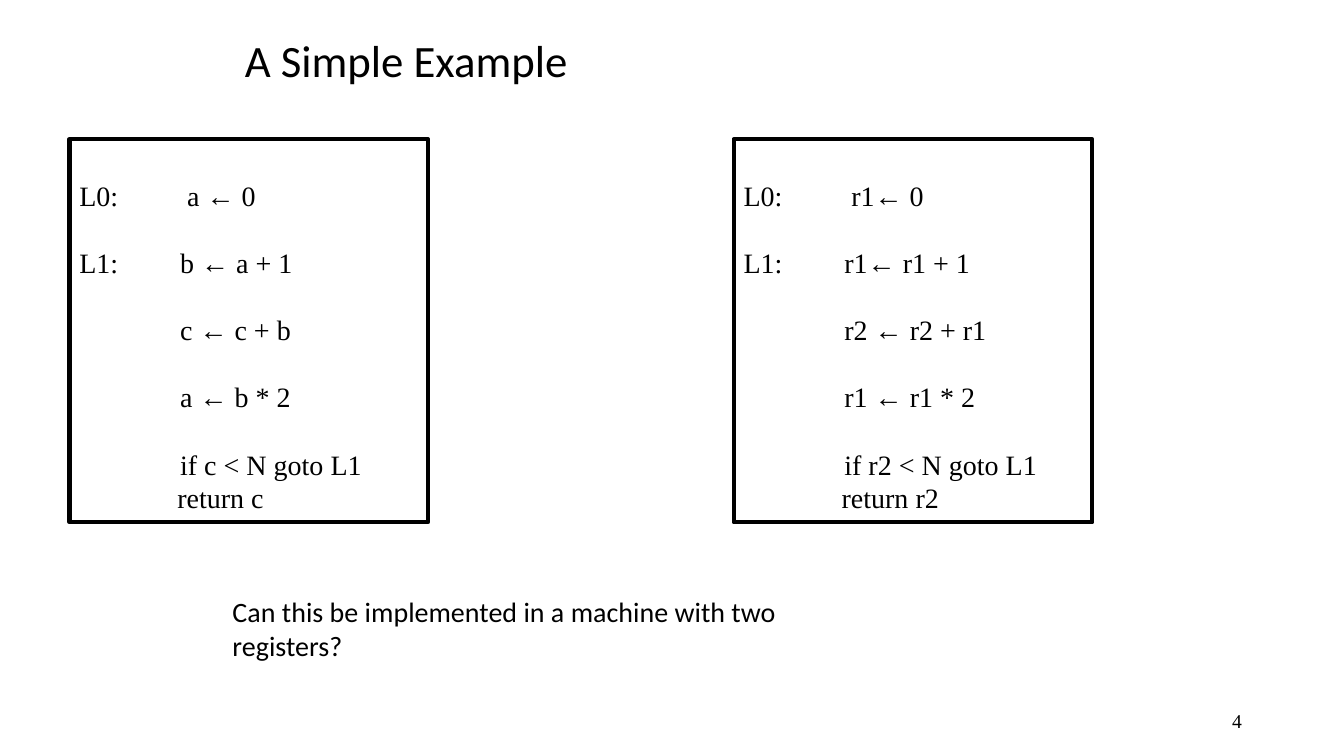
from pptx import Presentation
from pptx.dml.color import RGBColor
from pptx.enum.shapes import MSO_SHAPE
from pptx.enum.text import MSO_ANCHOR, PP_ALIGN
from pptx.util import Cm, Pt

RECTANGLE = MSO_SHAPE.RECTANGLE
TOP, MIDDLE, BOTTOM = MSO_ANCHOR.TOP, MSO_ANCHOR.MIDDLE, MSO_ANCHOR.BOTTOM
LEFT, RIGHT = PP_ALIGN.LEFT, PP_ALIGN.RIGHT

BLACK = "000000"
SANS, SERIF = "Calibri", "Times New Roman"
LINE_PITCH = Pt(24)
LABEL_WIDTH = Cm(2.54)
RETURN_INDENT = Cm(2.47)

VARIABLE_CODE = [
    ("L0:", " a ← 0"),
    ("L1:", "b ← a + 1"),
    ("", "c ← c + b"),
    ("", "a ← b * 2"),
    ("", "if c < N goto L1"),
    ("", "return c"),
]
REGISTER_CODE = [
    ("L0:", " r1← 0"),
    ("L1:", "r1← r1 + 1"),
    ("", "r2 ← r2 + r1"),
    ("", "r1 ← r1 * 2"),
    ("", "if r2 < N goto L1"),
    ("", "return r2"),
]


def color(hex_text):
    return RGBColor.from_string(hex_text)


def apply_format(target, values):
    for name, value in values.items():
        setattr(target, name, value)


def write(para, text, font, size):
    span = para.add_run()
    span.text = text
    apply_format(span.font, {"name": font, "size": Pt(size)})
    span.font.color.rgb = color(BLACK)


def add_text(page, box, text, font, size, anchor=TOP, para_format=None):
    frame = page.shapes.add_textbox(*box).text_frame
    apply_format(frame, {"word_wrap": True, "vertical_anchor": anchor})
    para = frame.paragraphs[0]
    apply_format(para, para_format or {})
    write(para, text, font, size)


def add_code(page, box, code):
    panel = page.shapes.add_shape(RECTANGLE, *box)
    panel.shadow.inherit = False
    panel.fill.background()
    panel.line.color.rgb = color(BLACK)
    panel.line.width = Pt(3)
    frame = panel.text_frame
    apply_format(frame, {"word_wrap": True, "vertical_anchor": BOTTOM,
                         "margin_bottom": Cm(0.2)})
    for index, (label, statement) in enumerate(code):
        para = frame.add_paragraph() if index else frame.paragraphs[0]
        is_return = statement.startswith("return")
        apply_format(para, {
            "alignment": LEFT,
            "line_spacing": LINE_PITCH,
            "space_before": Pt(0) if is_return else LINE_PITCH,
        })
        properties = para._p.get_or_add_pPr()
        margin = RETURN_INDENT if is_return else LABEL_WIDTH
        properties.set("marL", str(int(margin)))
        properties.set("indent", str(-int(margin) if label else 0))
        write(para, f"{label}\t{statement}" if label else statement, SERIF, 20)


def add_example(page, width, height):
    add_text(page, (Cm(5.92), 0, Cm(21.59), Cm(3.18)), "A Simple Example",
             SANS, 32, MIDDLE, {"line_spacing": 0.9})
    for index, code in enumerate((VARIABLE_CODE, REGISTER_CODE)):
        left = Cm(1.75) + index * Cm(16.74)
        add_code(page, (left, Cm(3.51), Cm(9.04), Cm(9.65)), code)
    add_text(page, (Cm(5.61), height - Cm(4.19), Cm(14.94), Cm(1.96)),
             "Can this be implemented in a machine with two registers?",
             SANS, 20)
    add_text(page, (width - Cm(9.94), height - Cm(1.4), Cm(7.62), Cm(1.02)),
             "4", SERIF, 14, MIDDLE, {"alignment": RIGHT})


def main():
    deck = Presentation()
    apply_format(deck, {"slide_width": Cm(33.87), "slide_height": Cm(19.05)})
    page = deck.slides.add_slide(deck.slide_layouts[6])
    add_example(page, deck.slide_width, deck.slide_height)
    deck.save("out.pptx")


if __name__ == "__main__":
    main()
